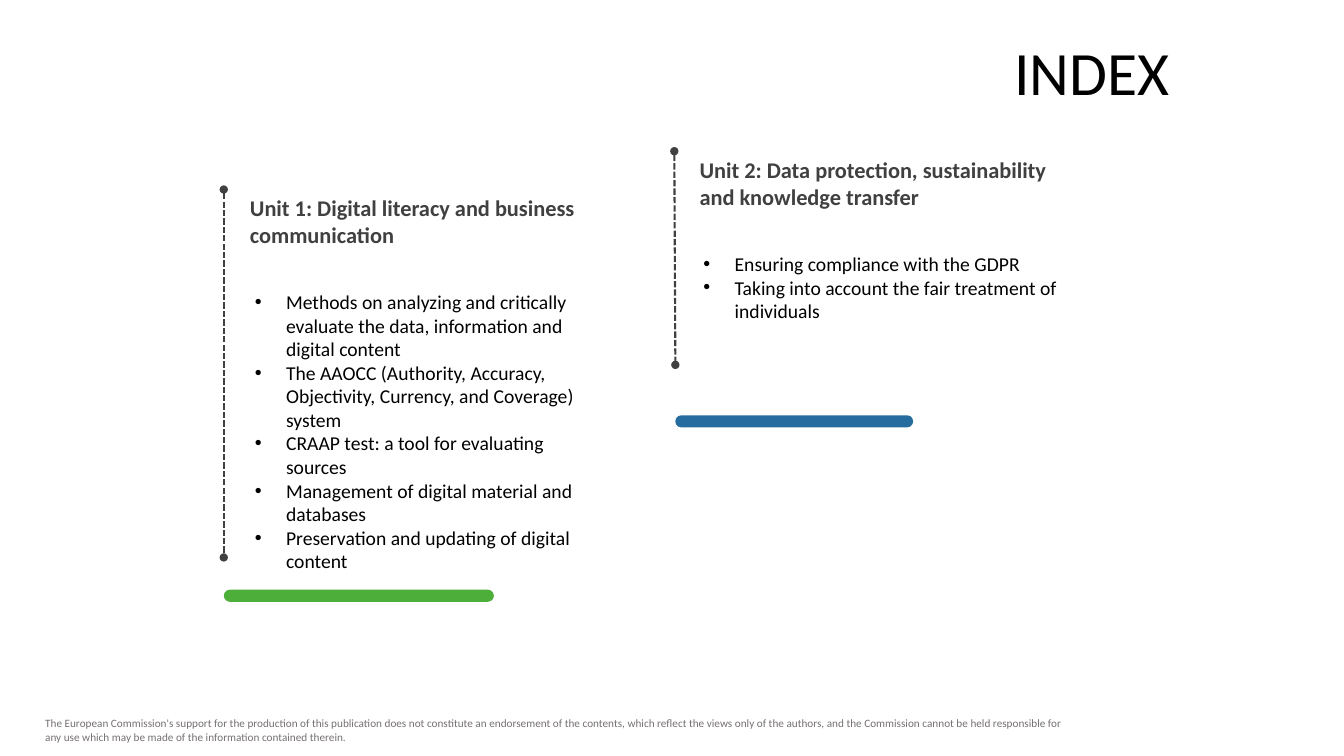
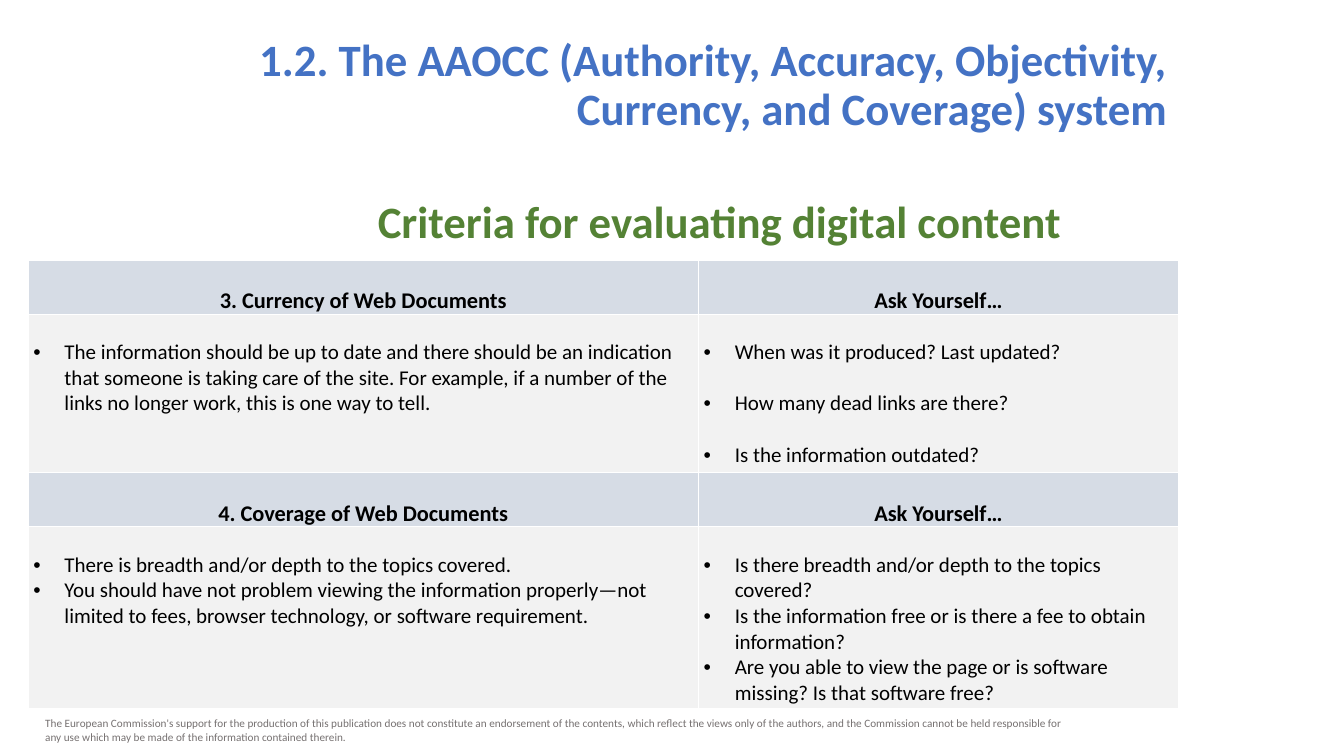
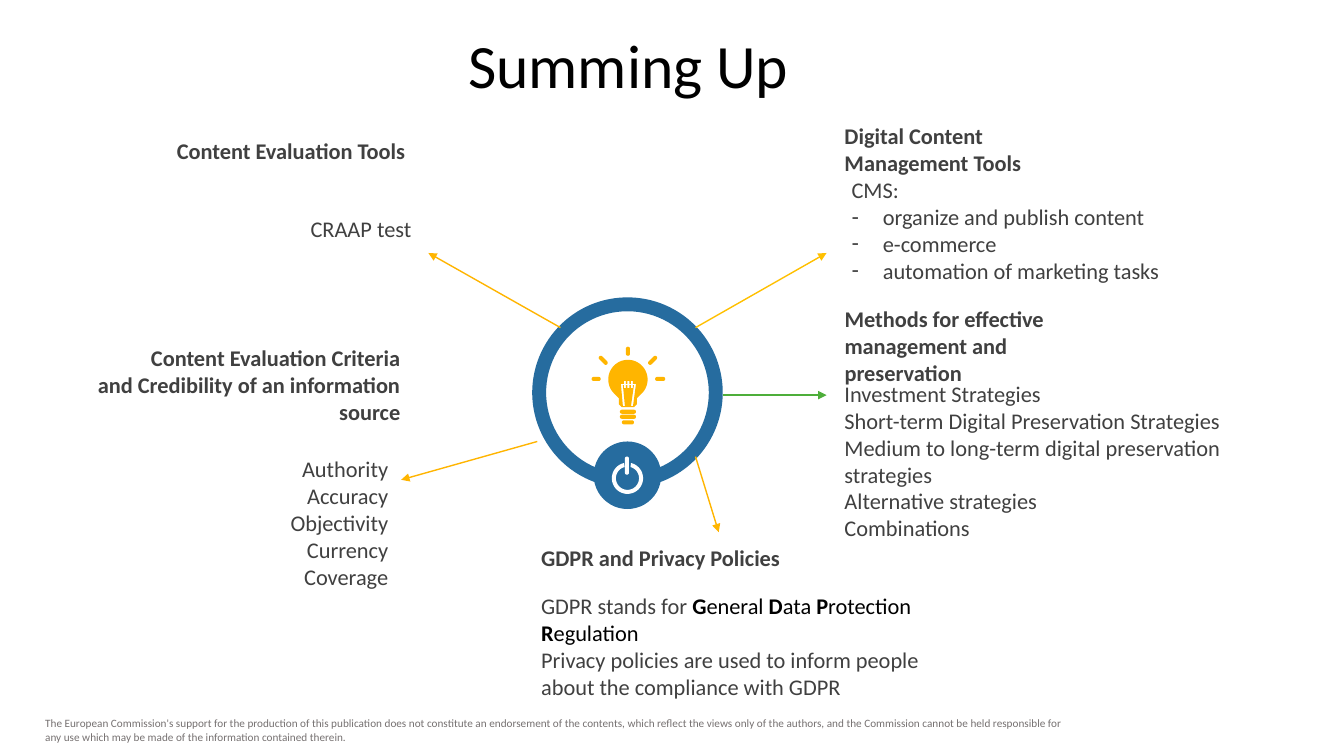
from math import cos, radians, sin

from lxml.etree import SubElement
from pptx import Presentation
from pptx.dml.color import RGBColor
from pptx.enum.dml import MSO_LINE
from pptx.enum.shapes import MSO_CONNECTOR, MSO_SHAPE as SHAPE
from pptx.enum.text import MSO_ANCHOR as ANCHOR, PP_ALIGN as ALIGN
from pptx.oxml import parse_xml
from pptx.oxml.ns import nsdecls, qn
from pptx.util import Pt

PX = 9144
BLACK = RGBColor(0x00, 0x00, 0x00)
WHITE = RGBColor(0xFF, 0xFF, 0xFF)
DARK = RGBColor(0x40, 0x40, 0x40)
GREY = RGBColor(0x76, 0x71, 0x71)
GREEN = RGBColor(0x4E, 0xAE, 0x3A)
BLUE = RGBColor(0x26, 0x6C, 0x9F)
AMBER = RGBColor(0xFF, 0xB5, 0x00)
GOLD = RGBColor(0xFF, 0xC0, 0x00)
TITLE_BLUE = RGBColor(0x44, 0x72, 0xC4)
SUBTITLE_GREEN = RGBColor(0x54, 0x82, 0x35)
HEAD_FILL = RGBColor(0xD6, 0xDC, 0xE5)
BODY_FILL = RGBColor(0xF2, 0xF2, 0xF2)

TITLE = {"size": Pt(44), "color": BLACK}
LONG_TITLE = {"size": Pt(32), "color": TITLE_BLUE, "bold": True}
SUBTITLE = {"size": Pt(32), "color": SUBTITLE_GREEN, "bold": True}
HEADING = {"size": Pt(16), "color": DARK, "bold": True}
BODY = {"size": Pt(16), "color": DARK}
UNIT_ITEM = {"size": Pt(14), "color": BLACK}
CELL_HEAD = {"size": Pt(16), "color": BLACK, "bold": True}
CELL_BODY = {"size": Pt(15), "color": BLACK}
FINE_PRINT = {"size": Pt(8), "color": GREY}
PLAIN = {"color": BLACK, "bold": False}
INITIAL = {"color": BLACK, "bold": True}

DISCLAIMER = (
    "The European Commission's support for the production of this publication does not "
    "constitute an endorsement of the contents, which reflect the views only of the authors, "
    "and the Commission cannot be held responsible for any use which may be made of the "
    "information contained therein."
)


def px(*values):
    """Turn px lengths into EMU."""
    return [round(v * PX) for v in values]


def style(font, fmt):
    """Apply a dict of format values to a font."""
    font.name = "Calibri"
    for name, value in fmt.items():
        if name == "color":
            font.color.rgb = value
        else:
            setattr(font, name, value)


def add_bullet(p, char):
    """Give a paragraph a hanging bullet."""
    pPr = p._p.get_or_add_pPr()
    pPr.set("marL", str(31 * PX))
    pPr.set("indent", str(-31 * PX))
    SubElement(pPr, qn("a:buFont")).set("typeface", "Arial")
    SubElement(pPr, qn("a:buChar")).set("char", char)


def write(tf, paras, fmt, bullet=None, unbulleted=0, gap=0, **para_fmt):
    """Write paragraphs, each a string or a list of (text, format) runs."""
    for i, para in enumerate(paras):
        p = tf.add_paragraph() if i else tf.paragraphs[0]
        if bullet and i >= unbulleted:
            add_bullet(p, bullet)
        if i and gap:
            p.space_before = Pt(gap)
        for name, value in para_fmt.items():
            setattr(p, name, value)
        for words, extra in [(para, {})] if isinstance(para, str) else para:
            r = p.add_run()
            r.text = words
            style(r.font, {**fmt, **extra})


def add_text(s, box, paras, fmt, anchor=ANCHOR.TOP, side=10, **options):
    """Add a wrapped text box."""
    tf = s.shapes.add_textbox(*px(*box)).text_frame
    tf.word_wrap = True
    tf.vertical_anchor = anchor
    tf.margin_left = tf.margin_right = side * PX
    write(tf, paras, fmt, **options)


def add_title(s, box, words, fmt=TITLE, alignment=ALIGN.RIGHT):
    """Add the slide title."""
    add_text(s, box, [words], fmt, alignment=alignment, line_spacing=0.9)


def paint(sp, color):
    """Fill a shape without outline or shadow."""
    sp.shadow.inherit = False
    sp.fill.solid()
    sp.fill.fore_color.rgb = color
    sp.line.fill.background()


def add_shape(s, kind, box, color, adjust=None):
    """Add a plain filled preset shape."""
    sp = s.shapes.add_shape(kind, *px(*box))
    paint(sp, color)
    if adjust is not None:
        sp.adjustments[0] = adjust


def add_icon(s, contours, color):
    """Add one filled freeform made of closed contours."""
    builder = None
    for points in contours:
        start, *rest = [px(*point) for point in points]
        if builder:
            builder.move_to(*start)
        else:
            builder = s.shapes.build_freeform(*start)
        builder.add_line_segments(rest, close=True)
    paint(builder.convert_to_shape(), color)


def arc(cx, cy, radius, start, end, steps=48):
    """Return points along an arc, angles in clockwise degrees."""
    angles = [radians(start + (end - start) * i / steps) for i in range(steps + 1)]
    return [(cx + radius * cos(a), cy + radius * sin(a)) for a in angles]


def capsule(cx, cy, length, turn=0, radius=2):
    """Return the outline of a round-ended bar around its centre."""
    dx, dy = [(length / 2 - radius) * f(radians(turn)) for f in (cos, sin)]
    return (arc(cx + dx, cy + dy, radius, turn - 90, turn + 90, 12)
            + arc(cx - dx, cy - dy, radius, turn + 90, turn + 270, 12))


def add_line(s, ends, color, width=1, dash=None, head=None, tail=None):
    """Add a straight line with optional dash and end marks."""
    c = s.shapes.add_connector(MSO_CONNECTOR.STRAIGHT, *px(*ends))
    c.line.color.rgb = color
    c.line.width = Pt(width)
    if dash:
        c.line.dash_style = dash
    for tag, mark in (("a:headEnd", head), ("a:tailEnd", tail)):
        if mark:
            SubElement(c.get_or_add_ln(), qn(tag)).set("type", mark)
    SubElement(c._element.spPr, qn("a:effectLst"))


def set_borders(cell):
    """Give a cell thin white borders."""
    tcPr = cell._tc.get_or_add_tcPr()
    for i, side in enumerate("LRTB"):
        tcPr.insert(i, parse_xml(
            f'<a:ln{side} {nsdecls("a")} w="12700"><a:solidFill>'
            f'<a:srgbClr val="{WHITE}"/></a:solidFill></a:ln{side}>'))


def fill_cell(cell, color, top, paras, fmt, **options):
    """Fill a table cell with colour and text."""
    cell.fill.solid()
    cell.fill.fore_color.rgb = color
    set_borders(cell)
    cell.margin_left = cell.margin_right = 5 * PX
    cell.margin_top, cell.margin_bottom = top * PX, 0
    write(cell.text_frame, paras, fmt, **options)


def add_criteria(s, top, body_height, topic, facts, questions, gap=0):
    """Add a table of one criterion and its questions."""
    heights, widths = (53, body_height), (665, 476)
    frame = s.shapes.add_table(2, 2, *px(28, top, sum(widths), sum(heights)))
    tbl = frame.table
    tbl.first_row = tbl.horz_banding = False
    for row, height in zip(tbl.rows, heights):
        row.height = height * PX
    columns = ((topic, facts, 0), ("Ask Yourself…", questions, gap))
    for i, (heading, items, space) in enumerate(columns):
        tbl.columns[i].width = widths[i] * PX
        fill_cell(tbl.cell(0, i), HEAD_FILL, 27, [heading], CELL_HEAD, alignment=ALIGN.CENTER)
        fill_cell(tbl.cell(1, i), BODY_FILL, 25, items, CELL_BODY, bullet="•", gap=space)


def add_unit(s, rule, bar, heading_box, heading, items_box, items, color):
    """Add one unit of the index."""
    add_shape(s, SHAPE.ROUNDED_RECTANGLE, bar, color, 0.5)
    add_text(s, items_box, items, UNIT_ITEM, bullet="•")
    add_text(s, heading_box, [heading], HEADING, side=12)
    add_line(s, rule, DARK, 1.5, MSO_LINE.SQUARE_DOT, "oval", "oval")


def add_topic(s, heading_box, heading, body_box, body, **options):
    """Add a heading and its details around the hub."""
    align = {"alignment": options.pop("alignment", ALIGN.LEFT)}
    add_text(s, body_box, body, BODY, ANCHOR.MIDDLE, **align, **options)
    add_text(s, heading_box, heading, HEADING, ANCHOR.MIDDLE, **align)


def add_bulb(s):
    """Draw the light bulb with its filament cut out."""
    glass = [*arc(623, 376.5, 19.5, -225, 45), (632, 395), (632, 401), (629, 404),
             (617, 404), (614, 401), (614, 395)]
    teeth = (620, 623.5, 627)
    upper = [(x + dx, y) for x in teeth for dx, y in ((-1, 381), (-1, 378), (1, 378), (1, 381))]
    lower = [(x + dx, y) for x in reversed(teeth)
             for dx, y in ((1, 382), (1, 385), (-1, 385), (-1, 382))]
    filament = [(616, 381), *upper, (631, 381), (628, 403), (626, 403), (629, 382),
                *lower, (618, 382), (620, 403), (618, 403)]
    bars = [(623, 419, 12), (623, 413.5, 16), (623, 408.5, 16), (591.5, 376, 9),
            (655, 376, 10), (623, 348.5, 9, 90), (647.5, 357.5, 11, -45), (598.5, 357.5, 11, 45)]
    add_icon(s, [glass, filament, *(capsule(*bar) for bar in bars)], AMBER)


def add_hub(s):
    """Draw the ring with its bulb and power button."""
    add_shape(s, SHAPE.DONUT, (528, 295, 189, 189), BLUE, 0.073)
    add_shape(s, SHAPE.OVAL, (589, 438, 67, 67), BLUE)
    add_bulb(s)
    ring = arc(622.5, 474.5, 15.5, -77, 257) + arc(622.5, 474.5, 11.5, 255, -75)
    add_icon(s, [ring, capsule(622, 462, 18, 90)], WHITE)


def new_slide(prs):
    """Add a blank slide with the disclaimer."""
    s = prs.slides.add_slide(prs.slide_layouts[6])
    add_text(s, (35, 706, 1046, 37), [DISCLAIMER], FINE_PRINT)
    return s


def index_slide(prs):
    """Build the index."""
    s = new_slide(prs)
    add_title(s, (309, 37, 861, 79), "INDEX")
    add_unit(s, (222, 188, 222, 553), (222, 585, 268, 12),
             (236, 188, 415, 64), "Unit 1: Digital literacy and business communication",
             (243, 283, 364, 316),
             ["Methods on analyzing and critically evaluate the data, information and digital content",
              "The AAOCC (Authority, Accuracy, Objectivity, Currency, and Coverage) system",
              "CRAAP test: a tool for evaluating sources",
              "Management of digital material and databases",
              "Preservation and updating of digital content"], GREEN)
    add_unit(s, (669, 150, 670, 362), (670, 412, 236, 12),
             (682, 150, 384, 64), "Unit 2: Data protection, sustainability and knowledge transfer",
             (688, 245, 395, 104),
             ["Ensuring compliance with the GDPR",
              "Taking into account the fair treatment of individuals"], BLUE)


def criteria_slide(prs):
    """Build the evaluation criteria tables."""
    s = new_slide(prs)
    add_title(s, (246, 33, 922, 31),
              "1.2. The AAOCC (Authority, Accuracy, Objectivity, Currency, and Coverage) system",
              LONG_TITLE)
    add_text(s, (365, 187, 804, 64), ["Criteria for evaluating digital content"], SUBTITLE)
    add_criteria(s, 258, 173, "3. Currency of Web Documents",
                 ["The information should be up to date and there should be an indication that "
                  "someone is taking care of the site. For example, if a number of the links no "
                  "longer work, this is one way to tell."],
                 ["When was it produced? Last updated?", "How many dead links are there?",
                  "Is the information outdated?"], gap=18.3)
    add_criteria(s, 469, 180, "4. Coverage of Web Documents",
                 ["There is breadth and/or depth to the topics covered.",
                  "You should have not problem viewing the information properly—not limited to "
                  "fees, browser technology, or software requirement."],
                 ["Is there breadth and/or depth to the topics covered?",
                  "Is the information free or is there a fee to obtain information?",
                  "Are you able to view the page or is software missing? Is that software free?"])


def summary_slide(prs):
    """Build the summary around the hub."""
    s = new_slide(prs)
    add_title(s, (287, 30, 673, 79), "Summing Up", alignment=ALIGN.CENTER)
    add_hub(s)
    for ends, color in (((717, 392, 820, 392), GREEN), ((556, 325, 425, 251), AMBER),
                        ((690, 325, 820, 251), GOLD), ((690, 453, 713, 528), AMBER),
                        ((533, 438, 398, 476), AMBER)):
        add_line(s, ends, color, tail="triangle")
    add_topic(s, (146, 131, 266, 37), ["Content Evaluation Tools"],
              (172, 208, 246, 37), ["CRAAP test"], alignment=ALIGN.RIGHT)
    add_topic(s, (84, 336, 323, 91),
              ["Content Evaluation Criteria", "and Credibility of an information source"],
              (74, 446, 321, 145),
              ["Authority", "Accuracy", "Objectivity", "Currency", "Coverage"],
              alignment=ALIGN.RIGHT)
    add_topic(s, (828, 116, 246, 64), ["Digital Content Management Tools"],
              (835, 169, 338, 118),
              ["CMS:", "organize and publish content", "e-commerce",
               "automation of marketing tasks"], bullet="-", unbulleted=1)
    add_topic(s, (828, 294, 291, 98), ["Methods for effective management and preservation"],
              (828, 346, 473, 222),
              ["Investment Strategies", "Short-term Digital Preservation Strategies",
               "Medium to long-term digital preservation strategies",
               "Alternative strategies", "Combinations"])
    add_topic(s, (527, 535, 268, 37), ["GDPR and Privacy Policies"],
              (527, 582, 404, 118),
              [[("GDPR stands for ", {}), ("G", INITIAL), ("eneral", PLAIN), (" D", INITIAL),
                ("ata", PLAIN), (" P", INITIAL), ("rotection", PLAIN), (" R", INITIAL),
                ("egulation", PLAIN)],
               "Privacy policies are used to inform people about the compliance with GDPR"])


def main():
    """Build and save the deck."""
    prs = Presentation()
    prs.slide_width, prs.slide_height = px(750 * 16 / 9, 750)
    for build in (index_slide, criteria_slide, summary_slide):
        build(prs)
    prs.save("out.pptx")


if __name__ == "__main__":
    main()
